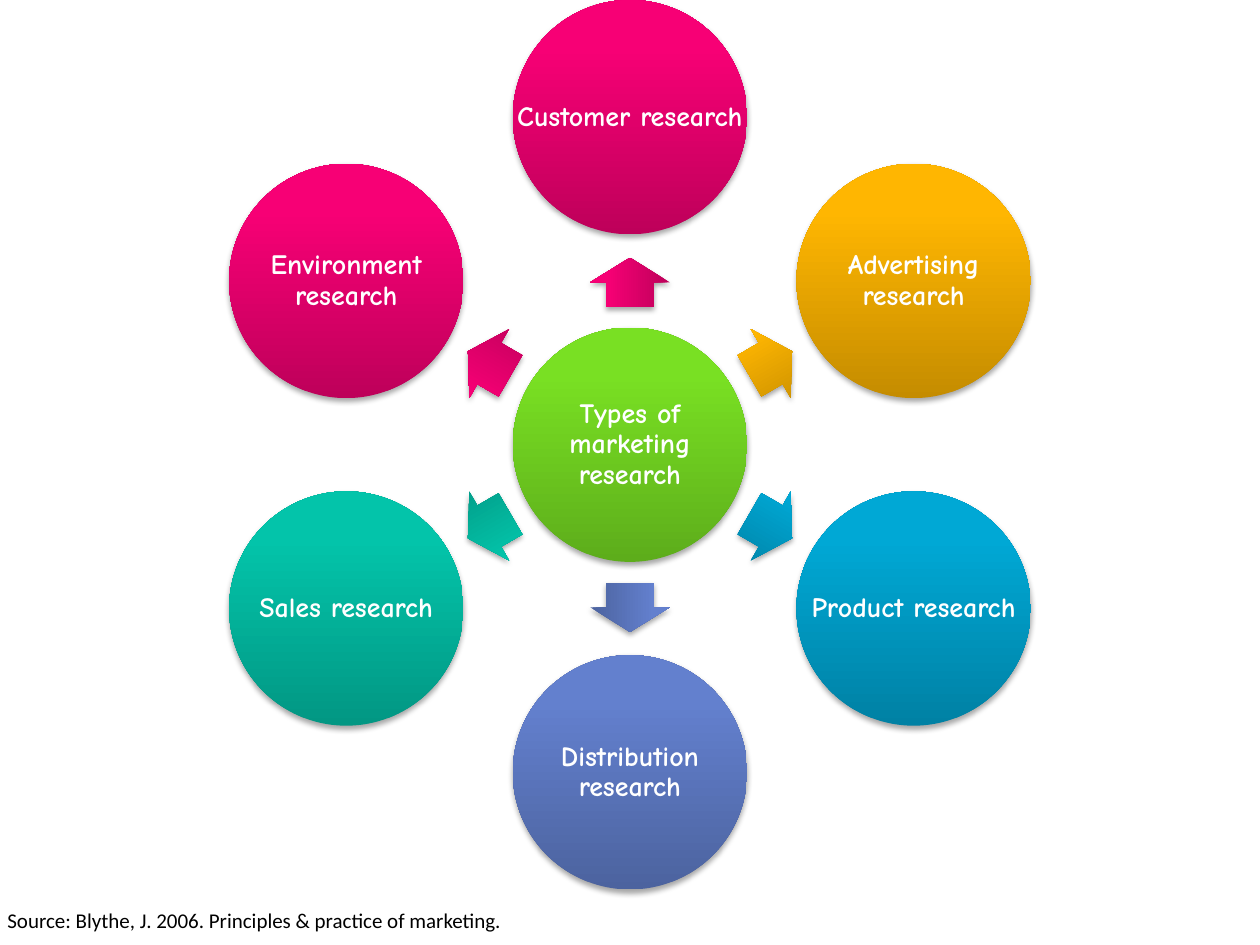
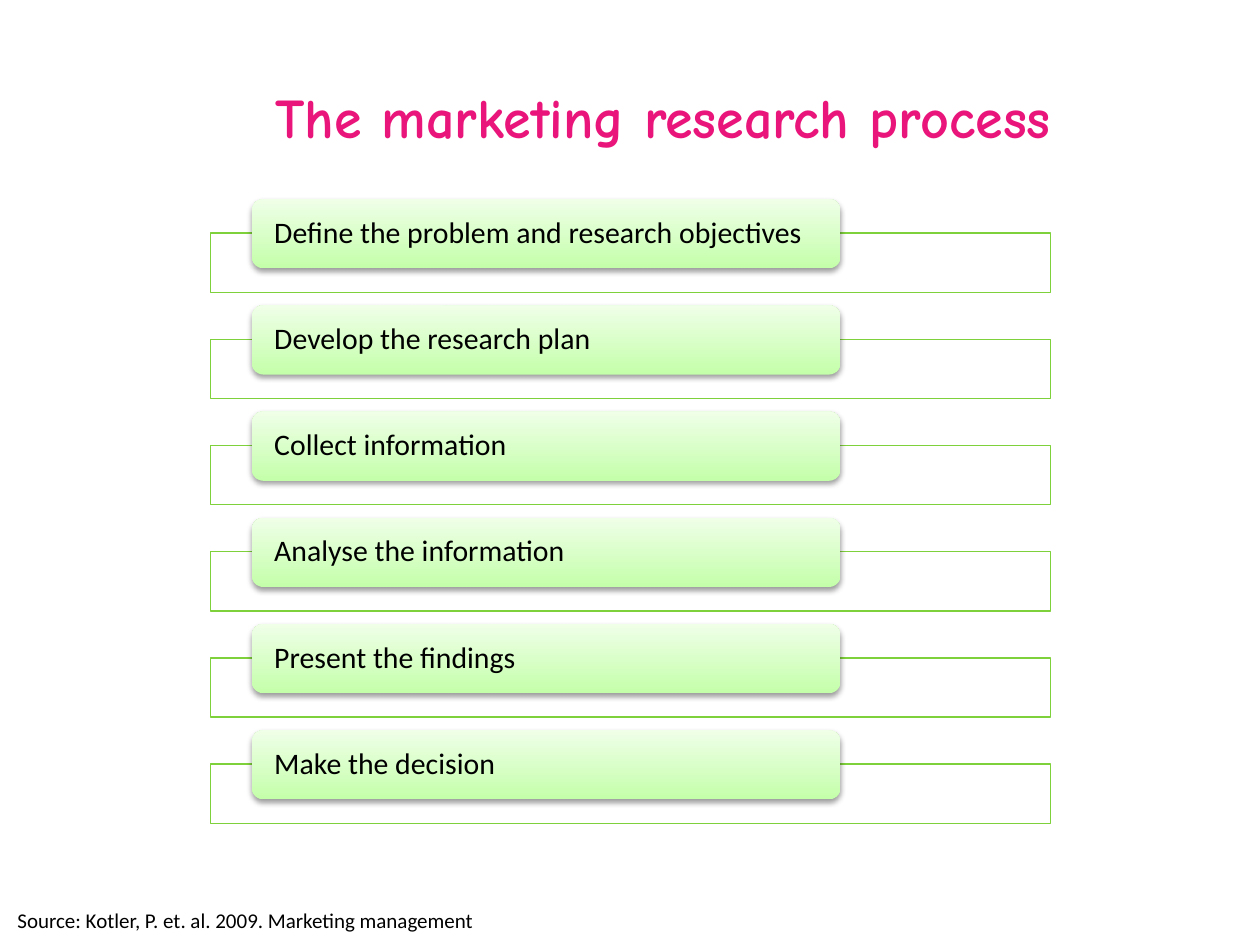
from math import cos, radians, sin

from lxml.etree import SubElement
from pptx import Presentation
from pptx.dml.color import RGBColor
from pptx.enum.shapes import MSO_SHAPE as Preset
from pptx.enum.text import MSO_ANCHOR as Anchor, PP_ALIGN as Align
from pptx.oxml.ns import qn
from pptx.util import Inches, Pt

DISPLAY_FONT = "Comic Neue"
BODY_FONT = "Calibri"
WHITE, BLACK = "FFFFFF", "000000"
TITLE_PINK, FRAME_GREEN = "EA157A", "7FD13B"
MINT = ("C4FFAA", "EFFFE8")

color = RGBColor.from_string


def add_glossy_shape(slide, preset, left, top, width, height, colors, light_at, shadow):
    """Add a shape shaded from colors[0] at its bottom up to colors[1], with a soft shadow.

    shadow is (opacity in percent, distance in points).
    """
    shape = slide.shapes.add_shape(
        preset, Inches(left), Inches(top), Inches(width), Inches(height))
    shape.line.fill.background()
    shape.fill.gradient()
    shape.fill.gradient_angle = 90
    for stop, position, hex_color in zip(shape.fill.gradient_stops, (0, light_at), colors):
        stop.position = position
        stop.color.rgb = color(hex_color)

    opacity, distance = shadow
    shape.shadow.inherit = False
    effects = shape._element.spPr.find(qn("a:effectLst"))
    outer = SubElement(effects, qn("a:outerShdw"), blurRad=str(Pt(3.1)),
                       dist=str(Pt(distance)), dir="5400000", rotWithShape="0")
    shade = SubElement(outer, qn("a:srgbClr"), val=BLACK)
    SubElement(shade, qn("a:alpha"), val=str(opacity * 1000))
    return shape


def write_text(shape, text, size, font, hex_color, bold=False, align=Align.LEFT,
               anchor=Anchor.MIDDLE, margins=(0.1, 0.05), spacing=1.0, wrap=True):
    frame = shape.text_frame
    frame.word_wrap = wrap
    frame.vertical_anchor = anchor
    frame.margin_left = frame.margin_right = Inches(margins[0])
    frame.margin_top = frame.margin_bottom = Inches(margins[1])
    paragraph = frame.paragraphs[0]
    paragraph.alignment = align
    paragraph.line_spacing = spacing
    run = paragraph.add_run()
    run.text = text
    run.font.size = Pt(size)
    run.font.name = font
    run.font.bold = bold
    run.font.color.rgb = color(hex_color)


presentation = Presentation()
presentation.slide_width = Inches(10)
presentation.slide_height = Inches(7.5)
blank = presentation.slide_layouts[6]
types_slide = presentation.slides.add_slide(blank)
process_slide = presentation.slides.add_slide(blank)

# Types of marketing research: a hub with six circles around it
HUB_X, HUB_Y = 5, 3.53
DIAMETER = 1.86
CIRCLE_DISTANCE, ARROW_DISTANCE = 2.6, 1.29
ARROW_LENGTH, ARROW_WIDTH = 0.39, 0.63
WHEEL_SHADOW = (35, 1.8)
PINK = ("BE005A", "F70075")

research_types = [
    ("Customer research", PINK),
    ("Advertising research", ("C58C00", "FFB601")),
    ("Product research", ("0081A4", "00A8D5")),
    ("Distribution research", ("4C639F", "6380CE")),
    ("Sales research", ("029783", "03C4AA")),
    ("Environment research", PINK),
]

circles = [("Types of marketing research", ("5DAD1B", "79E023"), HUB_X, HUB_Y)]
for index, (label, colors) in enumerate(research_types):
    angle = index * 360 / len(research_types) - 90
    across, down = cos(radians(angle)), sin(radians(angle))
    circles.append((label, colors, HUB_X + CIRCLE_DISTANCE * across,
                    HUB_Y + CIRCLE_DISTANCE * down))
    arrow = add_glossy_shape(
        types_slide, Preset.RIGHT_ARROW,
        HUB_X + ARROW_DISTANCE * across - ARROW_LENGTH / 2,
        HUB_Y + ARROW_DISTANCE * down - ARROW_WIDTH / 2,
        ARROW_LENGTH, ARROW_WIDTH, colors, 0.8, WHEEL_SHADOW)
    arrow.adjustments[0] = 0.6
    arrow.adjustments[1] = 0.5
    arrow.rotation = angle % 360

for label, colors, center_x, center_y in circles:
    left, top = center_x - DIAMETER / 2, center_y - DIAMETER / 2
    add_glossy_shape(types_slide, Preset.OVAL, left, top, DIAMETER, DIAMETER,
                     colors, 0.8, WHEEL_SHADOW)
    # A label may use the full width of its circle, so it has its own box
    label_box = types_slide.shapes.add_textbox(
        Inches(left), Inches(top), Inches(DIAMETER), Inches(DIAMETER))
    write_text(label_box, label, 16, DISPLAY_FONT, WHITE, bold=True,
               align=Align.CENTER, margins=(0.02, 0.02), spacing=0.9)

# The marketing research process: a title and six steps
title_box = process_slide.shapes.add_textbox(
    Inches(1.03), Inches(0.3), Inches(8.47), Inches(1.25))
write_text(title_box, "The marketing research process", 32, DISPLAY_FONT, TITLE_PINK,
           bold=True, align=Align.CENTER)

FIRST_STEP_TOP, STEP_PITCH = 1.58, 0.843
FRAME_DROP = 0.27

steps = [
    "Define the problem and research objectives",
    "Develop the research plan",
    "Collect information",
    "Analyse the information",
    "Present the findings",
    "Make the decision",
]
for index, step in enumerate(steps):
    top = FIRST_STEP_TOP + index * STEP_PITCH
    frame_box = process_slide.shapes.add_shape(
        Preset.RECTANGLE, Inches(1.67), Inches(top + FRAME_DROP), Inches(6.67), Inches(0.47))
    frame_box.shadow.inherit = False
    frame_box.fill.solid()
    frame_box.fill.fore_color.rgb = color(WHITE)
    frame_box.line.color.rgb = color(FRAME_GREEN)
    frame_box.line.width = Pt(0.75)
    step_tab = add_glossy_shape(process_slide, Preset.ROUNDED_RECTANGLE, 2, top, 4.67, 0.55,
                                MINT, 1.0, (38, 1.6))
    write_text(step_tab, step, 17, BODY_FONT, BLACK, margins=(0.15, 0), spacing=0.9)

# Source line at the foot of each slide
sources = [
    (types_slide, -0.04, 4.21, "Source: Blythe, J. 2006. Principles & practice of marketing."),
    (process_slide, 0.04, 3.86, "Source: Kotler, P. et. al. 2009. Marketing management"),
]
for slide, left, width, source in sources:
    source_box = slide.shapes.add_textbox(
        Inches(left), Inches(7.15), Inches(width), Inches(0.3))
    write_text(source_box, source, 12, BODY_FONT, BLACK, anchor=Anchor.TOP, wrap=False)

presentation.save("out.pptx")
